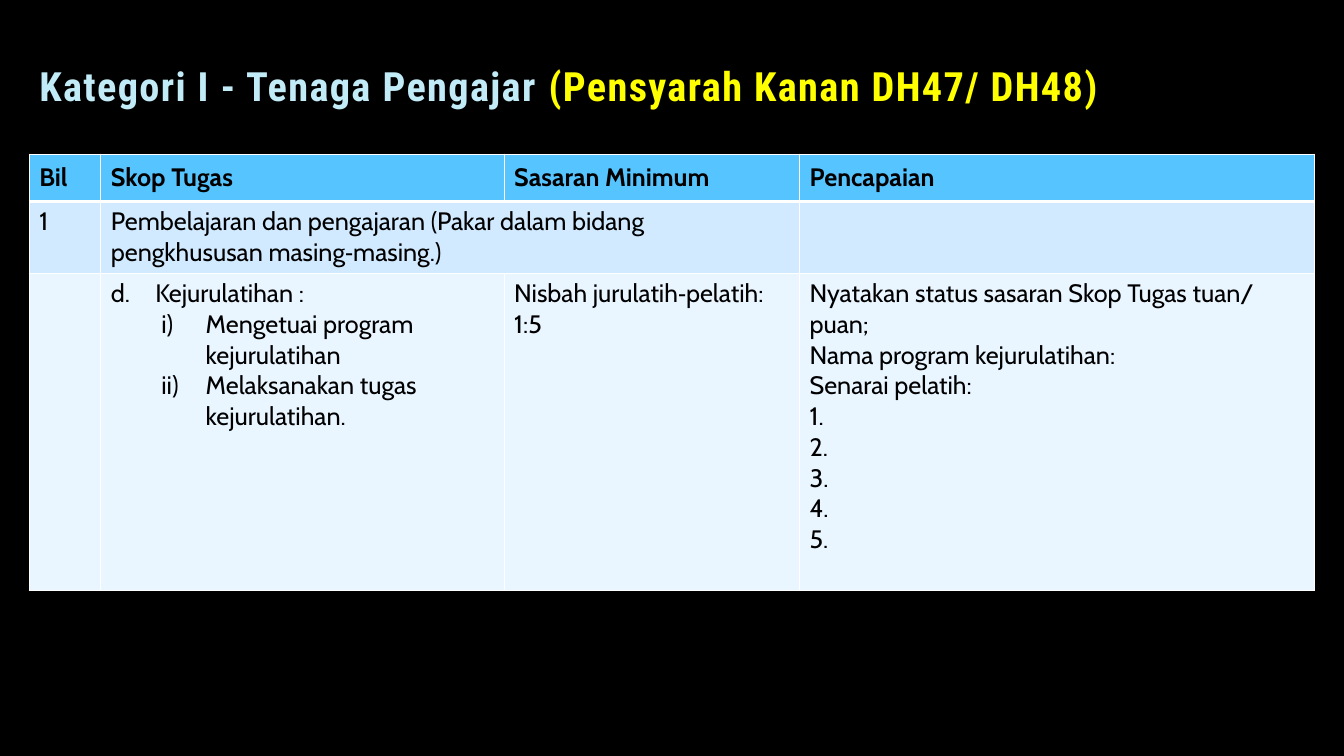
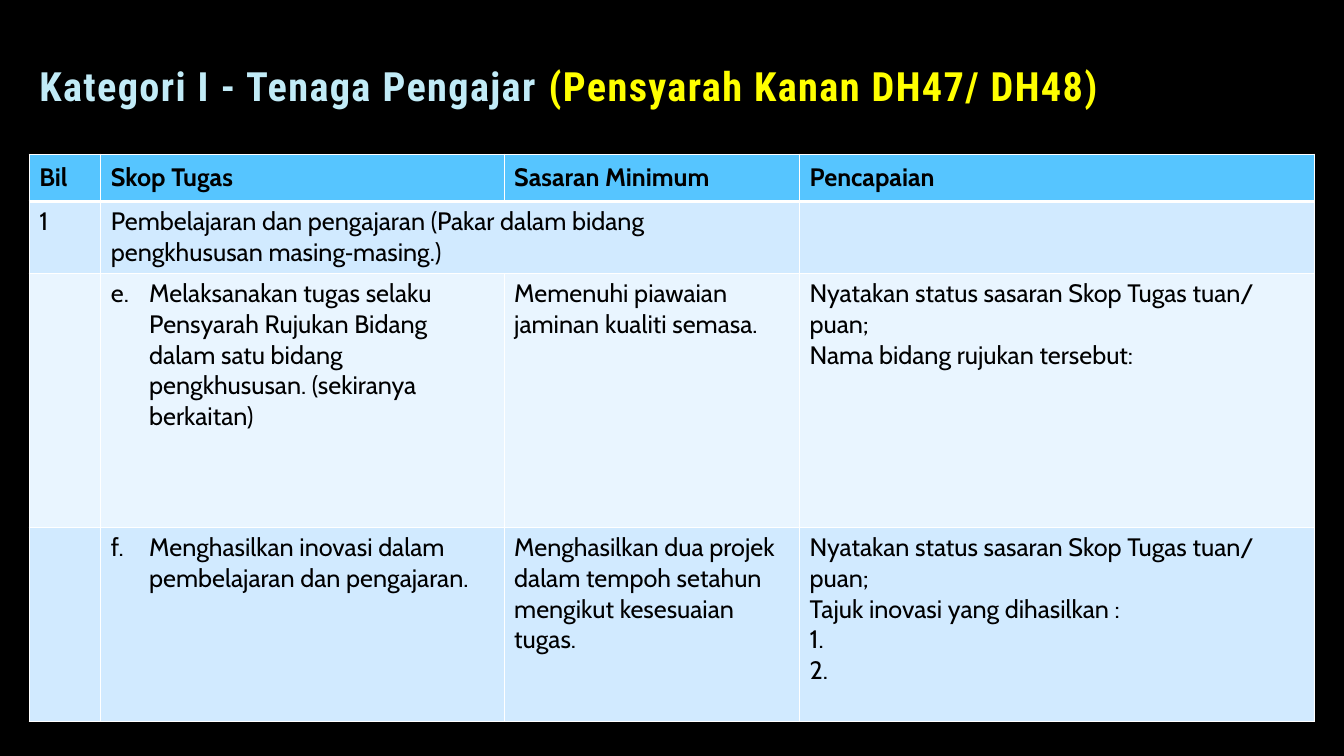
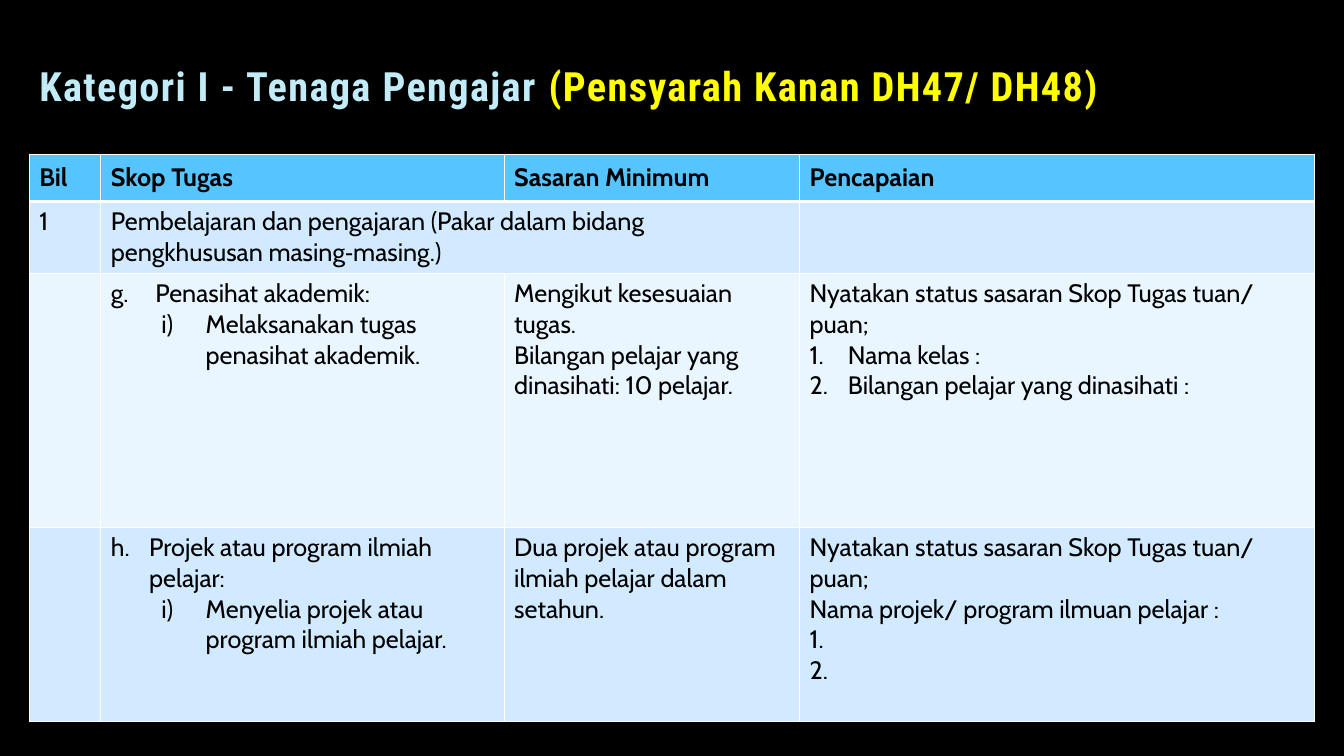
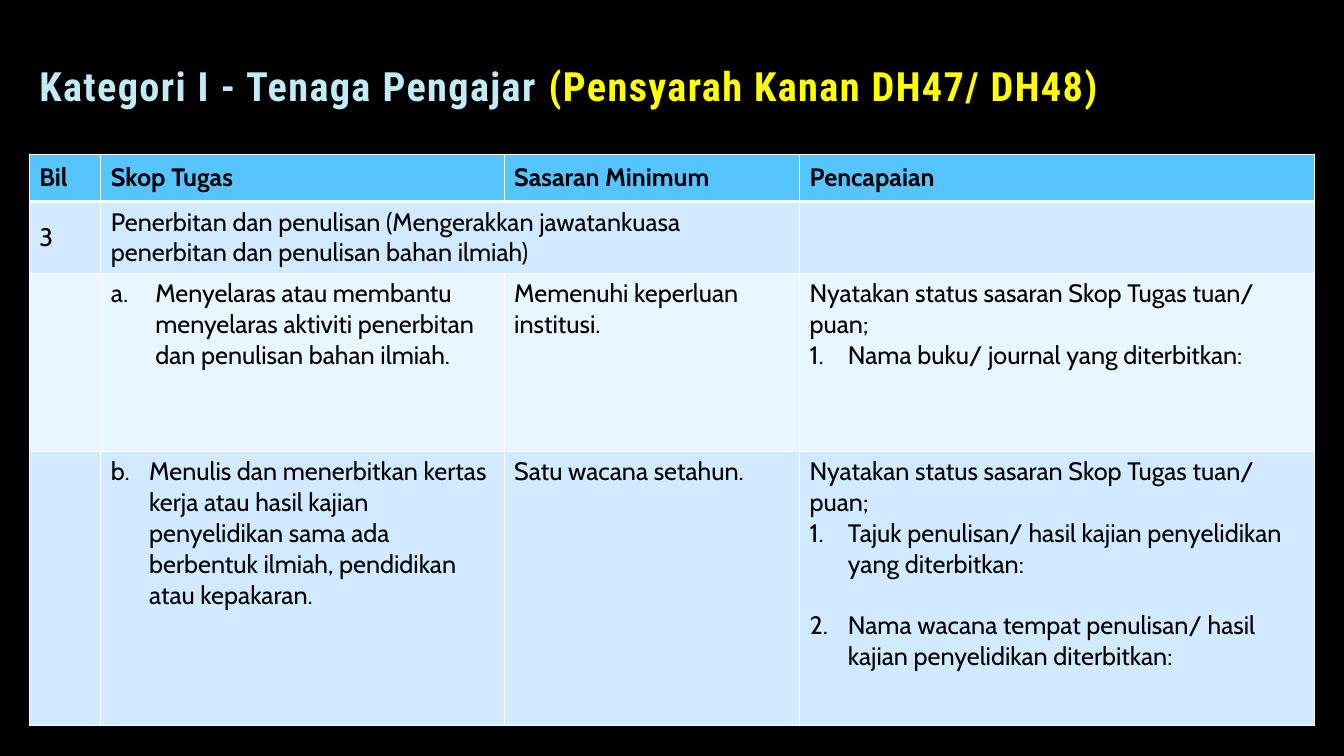
from dataclasses import dataclass
from typing import Any

from lxml import etree
from pptx import Presentation
from pptx import util as u
from pptx.dml import color
from pptx.enum import text
from pptx.oxml import ns

COLOURS = {
    "background": "000000",
    "title": "C1EBF7",
    "rank": "FFFF00",
    "outline": "404040",
    "header": "56C5FF",
    "band": "D1EAFF",
    "plain": "E9F5FF",
    "text": "000000",
    "border": "FFFFFF",
}
TITLE_RUNS = (
    ("Kategori I - Tenaga Pengajar ", "title"),
    ("(Pensyarah Kanan DH47/ DH48)", "rank"),
)
TITLE_BOX = {
    "left": u.Inches(0.29),
    "top": u.Inches(0.47),
    "width": u.Inches(11.37),
    "height": u.Inches(0.67),
}
TITLE_FRAME = {
    "vertical_anchor": text.MSO_ANCHOR.BOTTOM,
    "auto_size": text.MSO_AUTO_SIZE.NONE,
    "word_wrap": True,
}
TITLE_PARAGRAPH = {"alignment": text.PP_ALIGN.LEFT, "line_spacing": 0.9}
TITLE_FONT = {"name": "Roboto Condensed", "size": u.Pt(28.8), "bold": True}
BODY_FONT = {"name": "Cabin", "size": u.Pt(18), "bold": False}
HEADER_FONT = BODY_FONT | {"bold": True}

HEADINGS = ("Bil", "Skop Tugas", "Sasaran Minimum", "Pencapaian")
COLUMN_WIDTHS = (0.71, 4, 2.93, 5.11)
HEADER_HEIGHT = 0.47
SECTION_HEIGHT = 0.7
TABLE_LEFT, TABLE_TOP = 0.29, 1.53
THIN, THICK = 1, 3


@dataclass(frozen=True)
class Line:
    words: str
    numbering: str = ""
    start: int = 1
    margin: float = 0
    hanging: float = 0
    level: int = 0
    gap: float = 0


@dataclass(frozen=True)
class Task:
    height: float
    scope: tuple[Line, ...]
    target: tuple[Line, ...]
    achievement: tuple[Line, ...]


@dataclass(frozen=True)
class Section:
    number: str
    heading: str
    tasks: tuple[Task, ...]
    anchor: Any = text.MSO_ANCHOR.TOP


def plain(*words: str) -> tuple[Line, ...]:
    return tuple(Line(item) for item in words)


def lettered(words: str, start: int, indent: float = 0.38) -> Line:
    return Line(words, "alphaLcPeriod", start, indent, indent)


def roman(words: str) -> Line:
    return Line(words, "romanLcParenR", 1, 0.94, 0.44, 1)


def numbered(words: str, start: int = 1, gap: float = 0) -> Line:
    return Line(words, "arabicPeriod", start, 0.38, 0.38, 0, gap)


STATUS = Line("Nyatakan status sasaran Skop Tugas tuan/ puan;")
TEACHING = "Pembelajaran dan pengajaran (Pakar dalam bidang pengkhususan masing‐masing.)"
PUBLISHING = "Penerbitan dan penulisan (Mengerakkan jawatankuasa penerbitan dan penulisan bahan ilmiah)"

SECTIONS = (
    Section("1", TEACHING, (
        Task(
            3.15,
            (
                lettered("Kejurulatihan :", 4, 0.44),
                roman("Mengetuai program kejurulatihan"),
                roman("Melaksanakan tugas kejurulatihan."),
            ),
            plain("Nisbah jurulatih‐pelatih: 1:5"),
            (STATUS, *plain("Nama program kejurulatihan:", "Senarai pelatih:",
                            "1.", "2.", "3.", "4.", "5.")),
        ),
    )),
    Section("1", TEACHING, (
        Task(
            2.52,
            (lettered("Melaksanakan tugas selaku Pensyarah Rujukan Bidang dalam satu "
                      "bidang pengkhususan. (sekiranya berkaitan)", 5),),
            plain("Memenuhi piawaian jaminan kualiti semasa."),
            (STATUS, *plain("Nama bidang rujukan tersebut:")),
        ),
        Task(
            1.93,
            (lettered("Menghasilkan inovasi dalam pembelajaran dan pengajaran.", 6),),
            plain("Menghasilkan dua projek dalam tempoh setahun mengikut kesesuaian tugas."),
            (STATUS, *plain("Tajuk inovasi yang dihasilkan :", "1.", "2.")),
        ),
    )),
    Section("1", TEACHING, (
        Task(
            2.52,
            (
                lettered("Penasihat akademik:", 7, 0.44),
                roman("Melaksanakan tugas penasihat akademik."),
            ),
            plain("Mengikut kesesuaian tugas.", "Bilangan pelajar yang dinasihati: 10 pelajar."),
            (STATUS, numbered("Nama kelas :"), numbered("Bilangan pelajar yang dinasihati :")),
        ),
        Task(
            1.93,
            (
                lettered("Projek atau program ilmiah pelajar:", 8),
                roman("Menyelia projek atau program ilmiah pelajar."),
            ),
            plain("Dua projek atau program ilmiah pelajar dalam setahun."),
            (STATUS, *plain("Nama projek/ program ilmuan pelajar :", "1.", "2.")),
        ),
    )),
    Section("3", PUBLISHING, (
        Task(
            1.77,
            (lettered("Menyelaras atau membantu menyelaras aktiviti penerbitan dan "
                      "penulisan bahan ilmiah.", 1, 0.44),),
            plain("Memenuhi keperluan institusi."),
            (STATUS, numbered("Nama buku/ journal yang diterbitkan:")),
        ),
        Task(
            2.72,
            (lettered("Menulis dan menerbitkan kertas kerja atau hasil kajian penyelidikan "
                      "sama ada berbentuk ilmiah, pendidikan atau kepakaran.", 2),),
            plain("Satu wacana setahun."),
            (
                STATUS,
                numbered("Tajuk penulisan/ hasil kajian penyelidikan yang diterbitkan:"),
                numbered("Nama wacana tempat penulisan/ hasil kajian penyelidikan "
                         "diterbitkan:", 2, 22),
            ),
        ),
    ), text.MSO_ANCHOR.MIDDLE),
)


def apply(target: Any, values: dict[str, Any]) -> None:
    for name, value in values.items():
        setattr(target, name, value)


def rgb(name: str) -> color.RGBColor:
    return color.RGBColor.from_string(COLOURS[name])


def add_element(parent: Any, tag: str, **attributes: str) -> Any:
    return etree.SubElement(parent, ns.qn(tag), attributes)


def add_solid_fill(parent: Any, colour: str) -> Any:
    return add_element(add_element(parent, "a:solidFill"), "a:srgbClr", val=COLOURS[colour])


def add_title(slide: Any) -> None:
    title = slide.shapes.title
    apply(title, TITLE_BOX)
    apply(title.text_frame, TITLE_FRAME)
    paragraph = title.text_frame.paragraphs[0]
    apply(paragraph, TITLE_PARAGRAPH)
    for words, colour in TITLE_RUNS:
        run = paragraph.add_run()
        run.text = words
        apply(run.font, TITLE_FONT)
        run.font.color.rgb = rgb(colour)
        properties = run.font._element
        properties.set("spc", "100")
        outline = etree.Element(ns.qn("a:ln"), w=str(u.Pt(0.75)))
        add_element(add_solid_fill(outline, "outline"), "a:alpha", val="10000")
        properties.insert(0, outline)


def style_cell(cell: Any, fill: str, top: float, bottom: float) -> None:
    properties = cell._tc.get_or_add_tcPr()
    for side, width in {"L": THIN, "R": THIN, "T": top, "B": bottom}.items():
        border = add_element(properties, f"a:ln{side}", w=str(u.Pt(width)))
        add_solid_fill(border, "border")
    cell.fill.solid()
    cell.fill.fore_color.rgb = rgb(fill)


def write_cell(cell: Any, lines: tuple[Line, ...], font: dict[str, Any] = BODY_FONT) -> None:
    frame = cell.text_frame
    for index, line in enumerate(lines):
        paragraph = frame.add_paragraph() if index else frame.paragraphs[0]
        paragraph.level = line.level
        if line.gap:
            paragraph.space_before = u.Pt(line.gap)
        if line.numbering:
            properties = paragraph._p.get_or_add_pPr()
            properties.set("marL", str(u.Inches(line.margin)))
            properties.set("indent", str(-u.Inches(line.hanging)))
            add_element(properties, "a:buFont", typeface="+mj-lt")
            add_element(properties, "a:buAutoNum", type=line.numbering, startAt=str(line.start))
        run = paragraph.add_run()
        run.text = line.words
        apply(run.font, font)
        run.font.color.rgb = rgb("text")


def add_task_table(slide: Any, section: Section) -> None:
    heights = (HEADER_HEIGHT, SECTION_HEIGHT, *(task.height for task in section.tasks))
    table = slide.shapes.add_table(
        len(heights), len(HEADINGS),
        u.Inches(TABLE_LEFT), u.Inches(TABLE_TOP),
        u.Inches(sum(COLUMN_WIDTHS)), u.Inches(sum(heights)),
    ).table
    apply(table, {"first_row": False, "horz_banding": False})
    for column, width in zip(table.columns, COLUMN_WIDTHS):
        column.width = u.Inches(width)
    for index, (row, height) in enumerate(zip(table.rows, heights)):
        row.height = u.Inches(height)
        fill = ("band" if index % 2 else "plain") if index else "header"
        for cell in row.cells:
            style_cell(cell, fill, THICK if index == 1 else THIN, THIN if index else THICK)
    for column, heading in enumerate(HEADINGS):
        cell = table.cell(0, column)
        cell.vertical_anchor = text.MSO_ANCHOR.MIDDLE
        write_cell(cell, plain(heading), HEADER_FONT)
    table.cell(1, 1).merge(table.cell(1, 2))
    for column, words in enumerate((section.number, section.heading)):
        cell = table.cell(1, column)
        cell.vertical_anchor = section.anchor
        write_cell(cell, plain(words))
    for row_index, task in enumerate(section.tasks, start=2):
        for column, lines in enumerate((task.scope, task.target, task.achievement), start=1):
            write_cell(table.cell(row_index, column), lines)


def main() -> None:
    presentation = Presentation()
    apply(presentation, {"slide_width": u.Inches(13.33), "slide_height": u.Inches(7.5)})
    background = presentation.slide_master.background.fill
    background.solid()
    background.fore_color.rgb = rgb("background")
    title_only = presentation.slide_layouts.get_by_name("Title Only")
    for section in SECTIONS:
        slide = presentation.slides.add_slide(title_only)
        add_title(slide)
        add_task_table(slide, section)
    presentation.save("out.pptx")


if __name__ == "__main__":
    main()
